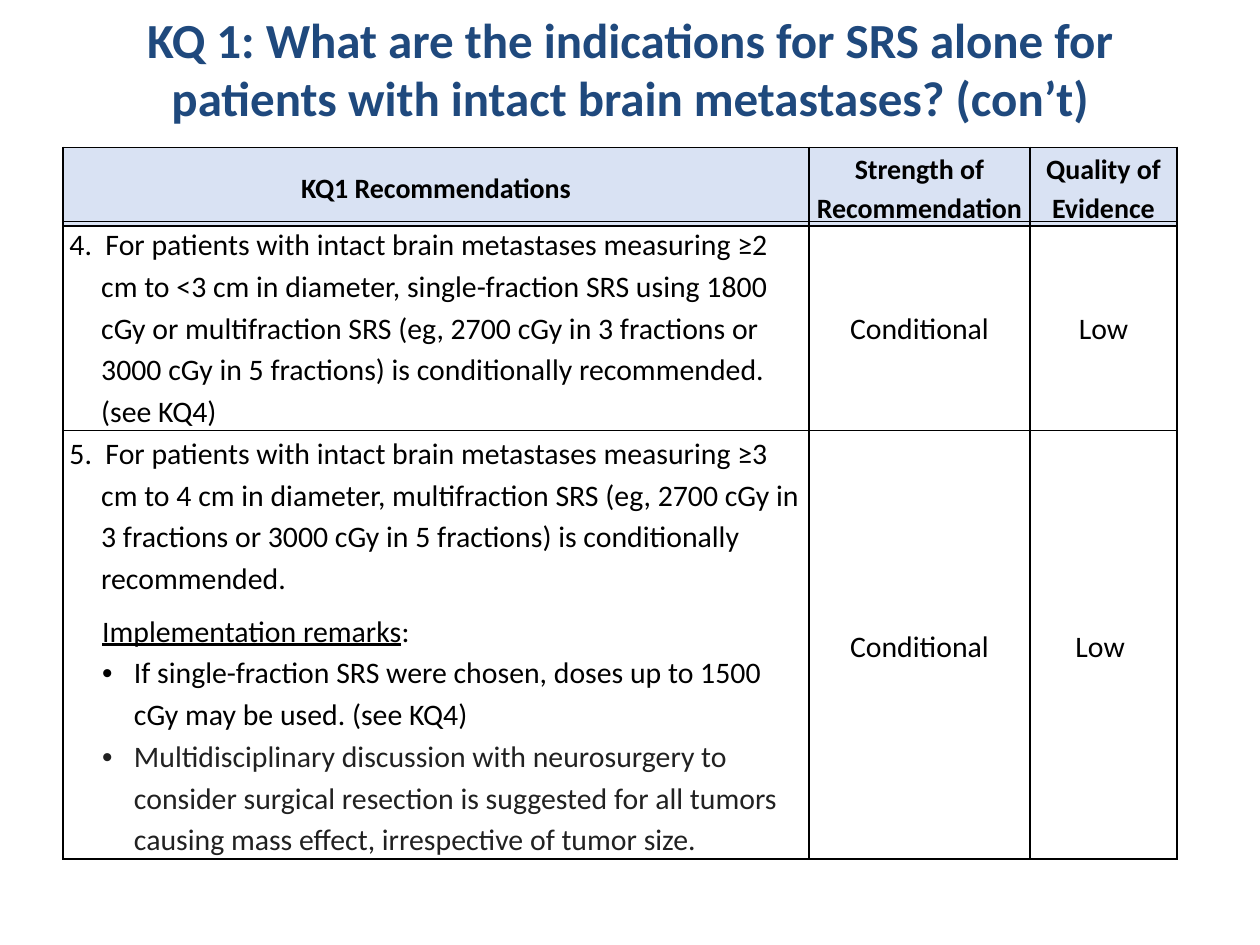
from pptx import Presentation
from pptx.dml.color import RGBColor as Rgb
from pptx.enum.text import MSO_ANCHOR as Anchor, MSO_AUTO_SIZE as Fit, PP_ALIGN as Align
from pptx.oxml.ns import qn
from pptx.util import Cm, Pt
from lxml.etree import SubElement as Sub

INK = {"title": "1F497D", "text": "000000", "soft": "212121",
       "head": "D9E2F3", "line": "000000"}
FONT = "Calibri"
LEFT = 1.27
COLS = [15.04, 4.45, 2.97]
STEP = 0.64  # hanging indent


def add_run(para, text, size, ink="text", bold=False, under=False):
    run = para.add_run()
    run.text = text
    font = run.font
    font.name, font.size, font.bold = FONT, Pt(size), bold
    font.underline = under
    font.color.rgb = Rgb.from_string(INK[ink])


def add_title(slide, text):
    title = slide.shapes.title
    title.left, title.top = Cm(LEFT), Cm(0.1)
    title.width, title.height = Cm(22.86), Cm(2.54)
    frame = title.text_frame
    frame.auto_size = Fit.NONE
    frame.vertical_anchor = Anchor.MIDDLE
    para = frame.paragraphs[0]
    para.alignment = Align.CENTER
    add_run(para, text, 28, "title", bold=True)


def frame_cell(cell, fill=None):
    """Give a cell its margins, black borders and fill."""
    cell.margin_left = cell.margin_right = Cm(0.13)
    cell.margin_top = cell.margin_bottom = 0
    props = cell._tc.get_or_add_tcPr()
    for side in ("a:lnL", "a:lnR", "a:lnT", "a:lnB"):
        line = Sub(props, qn(side), w=str(Pt(1)))
        solid = Sub(line, qn("a:solidFill"))
        Sub(solid, qn("a:srgbClr"), val=INK["line"])
    if fill:
        cell.fill.solid()
        cell.fill.fore_color.rgb = Rgb.from_string(INK[fill])
    else:
        cell.fill.background()


def add_grid(slide, top, rows, fill=None):
    """Add a plain table with one row per height."""
    shape = slide.shapes.add_table(len(rows), len(COLS), Cm(LEFT), Cm(top),
                                   Cm(sum(COLS)), Cm(sum(rows)))
    table = shape.table
    table.first_row = table.horz_banding = False
    for col, width in zip(table.columns, COLS):
        col.width = Cm(width)
    for row, height in zip(table.rows, rows):
        row.height = Cm(height)
    for cell in table.iter_cells():
        frame_cell(cell, fill)
    return table


def put_mid(cell, text, size, bold=False):
    """Write one centred line of text in a cell."""
    cell.vertical_anchor = Anchor.MIDDLE
    para = cell.text_frame.paragraphs[0]
    para.alignment = Align.CENTER
    para.line_spacing = 1.15
    add_run(para, text, size, bold=bold)


def put_list(cell, items):
    """Write paragraphs given as (left, hang, bullet, after, runs)."""
    frame = cell.text_frame
    for num, (left, hang, bullet, after, runs) in enumerate(items):
        para = frame.add_paragraph() if num else frame.paragraphs[0]
        props = para._p.get_or_add_pPr()
        props.set("marL", str(Cm(left)))
        props.set("indent", str(-Cm(hang)))
        if bullet:
            Sub(props, qn("a:buFont"), typeface="Arial")
            Sub(props, qn("a:buChar"), char="•")
        para.line_spacing = 1.15
        para.space_after = Pt(after)
        for text, style in runs:
            add_run(para, text, 17, **style)


def main():
    prs = Presentation()
    prs.slide_width, prs.slide_height = Cm(25.4), Cm(19.05)
    slide = prs.slides.add_slide(prs.slide_layouts[5])
    add_title(slide, "KQ 1: What are the indications for SRS alone for "
                     "patients with intact brain metastases? (con’t)")

    # Header table
    head = add_grid(slide, 2.97, [1.52], "head")
    names = ["KQ1 Recommendations", "Strength of Recommendation",
             "Quality of Evidence"]
    for cell, name in zip(head.iter_cells(), names):
        put_mid(cell, name, 16, bold=True)

    # Recommendations table
    four = [(STEP, STEP, False, 0, [(
        "4.  For patients with intact brain metastases measuring ≥2 cm to "
        "<3 cm in diameter, single-fraction SRS using 1800 cGy or "
        "multifraction SRS (eg, 2700 cGy in 3 fractions or 3000 cGy in 5 "
        "fractions) is conditionally recommended. (see KQ4)", {})])]
    five = [
        (STEP, STEP, False, 6, [(
            "5.  For patients with intact brain metastases measuring ≥3 cm "
            "to 4 cm in diameter, multifraction SRS (eg, 2700 cGy in 3 "
            "fractions or 3000 cGy in 5 fractions) is conditionally "
            "recommended.", {})]),
        (0.66, 0, False, 0, [("Implementation remarks", {"under": True}),
                             (":", {})]),
        (1.3, STEP, True, 0, [(
            "If single-fraction SRS were chosen, doses up to 1500 cGy may "
            "be used. (see KQ4)", {})]),
        (1.3, STEP, True, 0, [(
            "Multidisciplinary discussion with neurosurgery to consider "
            "surgical resection is suggested for all tumors causing mass "
            "effect, irrespective of tumor size.", {"ink": "soft"})]),
    ]
    body = add_grid(slide, 4.47, [4.14, 8.64])
    for row, (items, grade) in enumerate([(four, "Low"), (five, "Low ")]):
        put_list(body.cell(row, 0), items)
        put_mid(body.cell(row, 1), "Conditional", 17)
        put_mid(body.cell(row, 2), grade, 17)

    prs.save("out.pptx")


if __name__ == "__main__":
    main()
